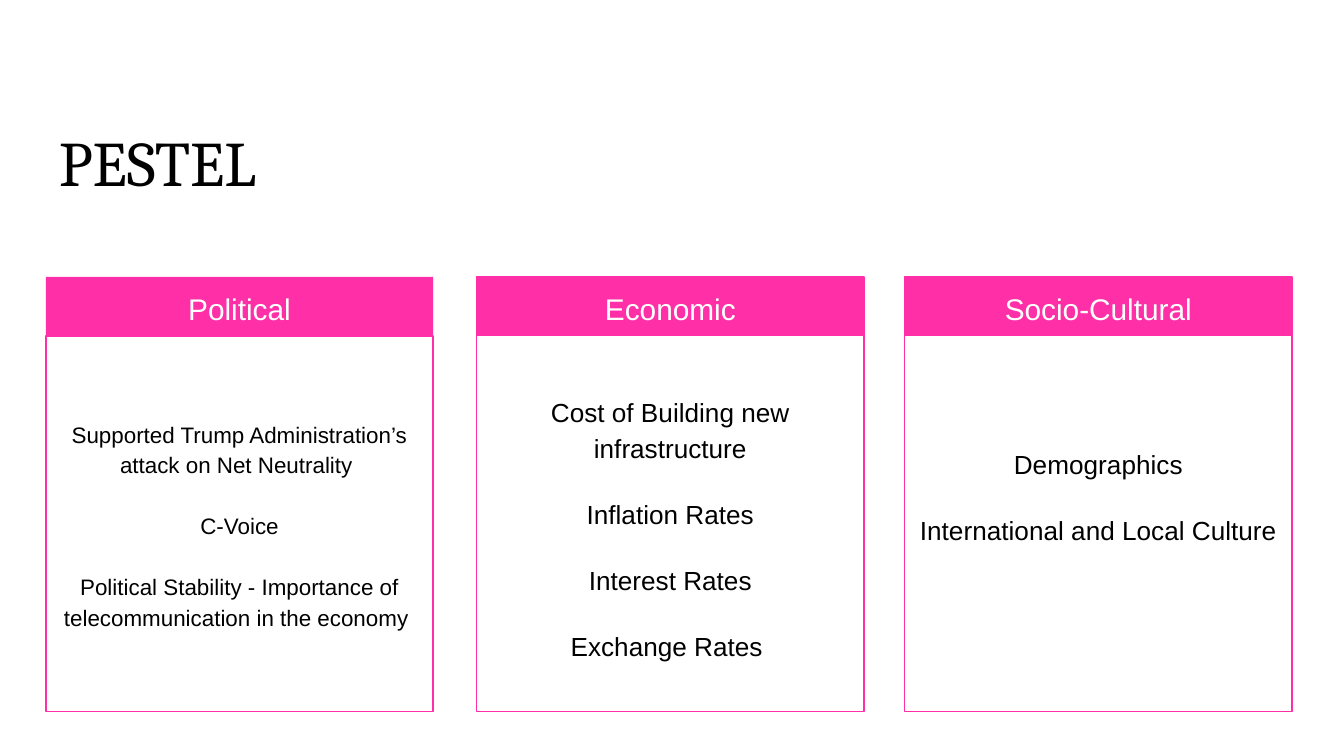
from pptx import Presentation
from pptx.dml.color import RGBColor
from pptx.enum.shapes import MSO_SHAPE
from pptx.enum.text import MSO_ANCHOR, PP_ALIGN
from pptx.util import Pt

COLORS = {"pink": "FF2FA7", "black": "000000", "white": "FFFFFF"}
INSET = 7.2
CARD_TOP, CARD_BOTTOM = 148.4, 381.2
CARD_WIDTH, HEADER_HEIGHT = 207.4, 31.6
HEADER_BOTTOM = CARD_TOP + HEADER_HEIGHT

CARDS = [
    {"heading": "Political", "left": 24.6, "body_top": HEADER_BOTTOM, "size": 12,
     "inset_top": INSET,
     "factors": ["Supported Trump Administration’s attack on Net Neutrality ",
                 "C-Voice",
                 "Political Stability - Importance of telecommunication in the economy "]},
    {"heading": "Economic", "left": 255.4, "body_top": CARD_TOP, "size": 14,
     "inset_top": 41.7,
     "factors": ["Cost of Building new infrastructure", "Inflation Rates",
                 "Interest Rates", "Exchange Rates "]},
    {"heading": "Socio-Cultural", "left": 484.7, "body_top": CARD_TOP, "size": 14,
     "inset_top": INSET,
     "factors": ["Demographics", "International and Local Culture"]},
]


def color(name):
    """Return the named palette colour."""
    return RGBColor.from_string(COLORS[name])


def set_frame(frame, anchor, inset_top=INSET):
    """Set wrapping, anchor and insets of a text frame."""
    frame.word_wrap = True
    frame.vertical_anchor = anchor
    frame.margin_left = frame.margin_right = frame.margin_bottom = Pt(INSET)
    frame.margin_top = Pt(inset_top)


def style_paragraph(paragraph, size, color_name, font="Arial", align=PP_ALIGN.CENTER):
    """Align a paragraph and format its runs."""
    paragraph.alignment = align
    for run in paragraph.runs:
        run.font.name = font
        run.font.size = Pt(size)
        run.font.color.rgb = color(color_name)


def add_title(slide, text):
    """Add the slide title."""
    title = slide.shapes.add_textbox(Pt(24.5), Pt(59), Pt(671), Pt(45.4))
    set_frame(title.text_frame, MSO_ANCHOR.TOP)
    title.text_frame.text = text
    style_paragraph(title.text_frame.paragraphs[0], 34, "black", "Cambria", PP_ALIGN.LEFT)


def add_rectangle(slide, left, top, bottom):
    """Add a card-wide rectangle without shadow."""
    rectangle = slide.shapes.add_shape(
        MSO_SHAPE.RECTANGLE, Pt(left), Pt(top), Pt(CARD_WIDTH), Pt(bottom - top))
    rectangle.shadow.inherit = False
    return rectangle


def add_header(slide, card):
    """Add the filled heading band of a card."""
    header = add_rectangle(slide, card["left"], CARD_TOP, HEADER_BOTTOM)
    header.fill.solid()
    header.fill.fore_color.rgb = color("pink")
    header.line.fill.background()
    set_frame(header.text_frame, MSO_ANCHOR.TOP)
    header.text_frame.text = card["heading"]
    style_paragraph(header.text_frame.paragraphs[0], 16, "white")


def add_body(slide, card):
    """Add the outlined body of a card with its factors."""
    body = add_rectangle(slide, card["left"], card["body_top"], CARD_BOTTOM)
    body.fill.background()
    body.line.color.rgb = color("pink")
    body.line.width = Pt(0.75)
    frame = body.text_frame
    set_frame(frame, MSO_ANCHOR.MIDDLE, card["inset_top"])
    frame.text = "\n".join(card["factors"])
    for paragraph in frame.paragraphs:
        style_paragraph(paragraph, card["size"], "black")
        paragraph.line_spacing = 1.15
    for paragraph in frame.paragraphs[1:]:
        paragraph.space_before = Pt(16)
    frame.paragraphs[-1].space_after = Pt(16)


def main():
    """Build and save the PESTEL slide."""
    deck = Presentation()
    deck.slide_width, deck.slide_height = Pt(720), Pt(405)
    slide = deck.slides.add_slide(deck.slide_layouts[6])
    add_title(slide, "PESTEL")
    for card in CARDS:
        add_header(slide, card)
        add_body(slide, card)
    deck.save("out.pptx")


if __name__ == "__main__":
    main()
